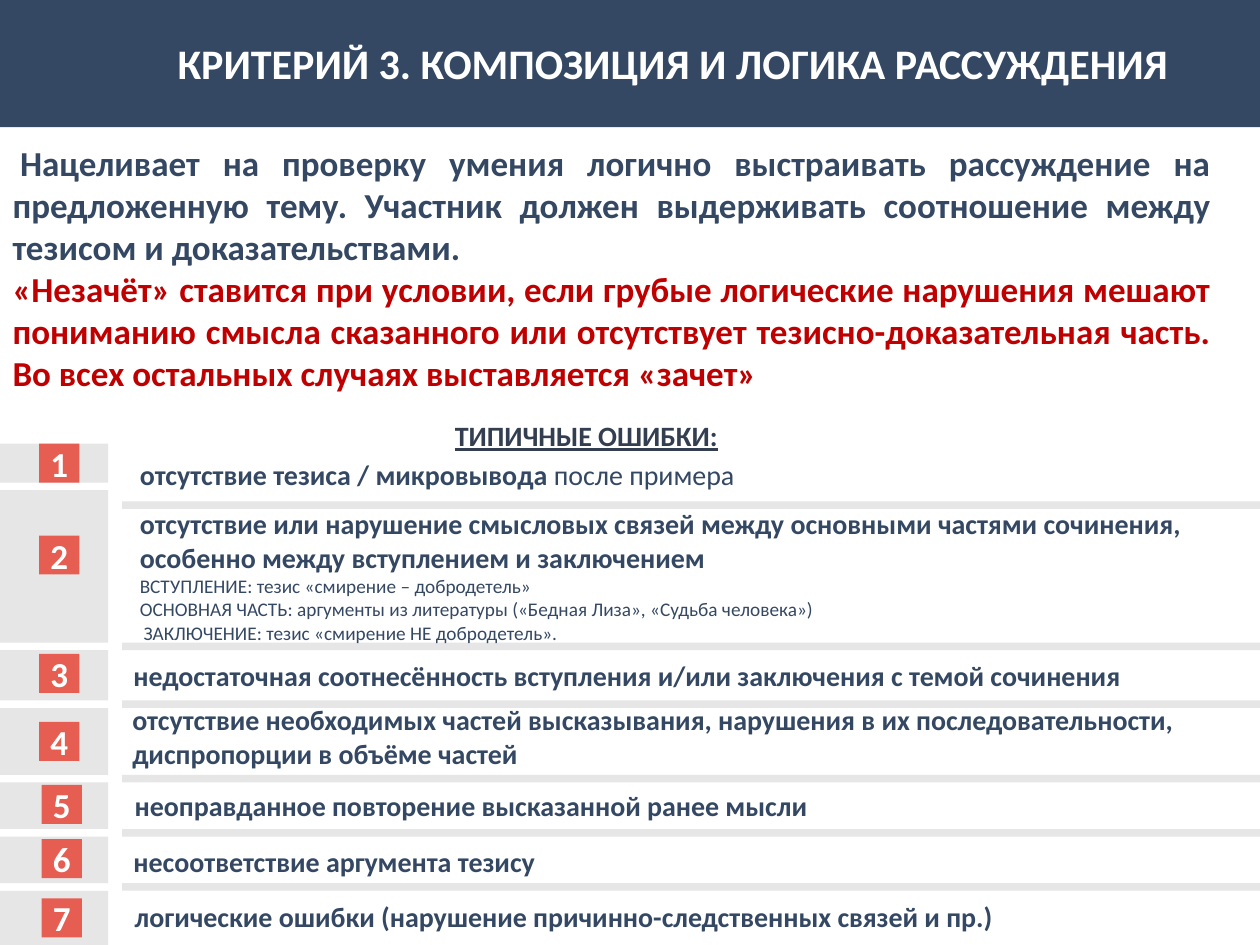
from pptx import Presentation
from pptx import util as u
from pptx.dml.color import RGBColor
from pptx.enum import shapes, text

NAVY, RED, CORAL, GREY, WHITE = "344863", "C00000", "E65E52", "E6E6E6", "FFFFFF"

prs = Presentation()
prs.slide_width, prs.slide_height = u.Inches(10), u.Inches(7.5)
slide = prs.slides.add_slide(prs.slide_layouts[6])


def add_block(left, top, width, height, color):
    block = slide.shapes.add_shape(shapes.MSO_SHAPE.RECTANGLE,
                                   *map(u.Inches, (left, top, width, height)))
    block.shadow.inherit = False
    block.fill.solid()
    block.fill.fore_color.rgb = RGBColor.from_string(color)
    block.line.fill.background()
    return block


def write(shape, paragraphs, inset=0.01, anchor=text.MSO_ANCHOR.TOP):
    """Each paragraph is (paragraph format, [(words, font format), ...])."""
    frame = shape.text_frame
    frame_format = dict(word_wrap=True, vertical_anchor=anchor, margin_left=0,
                        margin_right=0, margin_top=u.Inches(inset), margin_bottom=0)
    for key, value in frame_format.items():
        setattr(frame, key, value)
    for i, (layout, runs) in enumerate(paragraphs):
        paragraph = frame.paragraphs[0] if i == 0 else frame.add_paragraph()
        paragraph.alignment = layout.get("align", text.PP_ALIGN.LEFT)
        paragraph.space_before = u.Pt(layout.get("before", 0))
        for side in ("marL", "marR", "indent"):
            paragraph._p.get_or_add_pPr().set(side, str(u.Inches(layout.get(side, 0))))
        for words, look in runs:
            run = paragraph.add_run()
            run.text = words
            font_format = {"name": "Calibri", "size": 16, "bold": True, "color": NAVY, **look}
            run.font.color.rgb = RGBColor.from_string(font_format.pop("color"))
            font_format["size"] = u.Pt(font_format["size"])
            for key, value in font_format.items():
                setattr(run.font, key, value)


# Header band with the title
header = add_block(0, 0, 10, 1.01, NAVY)
write(header, [({"marL": 1.41}, [("КРИТЕРИЙ 3. КОМПОЗИЦИЯ И ЛОГИКА РАССУЖДЕНИЯ",
                                  {"size": 24, "color": WHITE})])], inset=0.3)

# Grey side bars, and separators in the gaps between them
GAP = 0.06
row_tops = [3.52, 3.89, 5.16, 5.62, 6.21, 6.64, 7.07]
row_ends = [top - GAP for top in row_tops[1:]] + [7.5]
for top, end in zip(row_tops, row_ends):
    add_block(0, top, 0.86, end - top, GREY)
for top in [3.98] + row_ends[1:-1]:
    add_block(0.97, top, 9.03, GAP, GREY)

# Numbered badges
badges = [(0.31, 3.52), (0.31, 4.25), (0.31, 5.19), (0.31, 5.73),
          (0.33, 6.23), (0.33, 6.66), (0.33, 7.13)]
for number, (left, top) in enumerate(badges, 1):
    badge = add_block(left, top, 0.32, 0.31, CORAL)
    write(badge, [({"align": text.PP_ALIGN.CENTER},
                   [(str(number), {"size": 20, "color": WHITE})])],
          inset=0, anchor=text.MSO_ANCHOR.MIDDLE)

# Text: what the criterion checks, then the typical mistakes
justified = {"align": text.PP_ALIGN.JUSTIFY, "marL": 0.01, "marR": 0.12}
small = {"size": 11, "bold": False}
passages = [
    ((0.09, 1.11, 9.64, 2.03), 0.01, [
        ({**justified, "indent": 0.06}, [(
            "Нацеливает на проверку умения логично выстраивать рассуждение на "
            "предложенную тему. Участник должен выдерживать соотношение между "
            "тезисом и доказательствами.", {"size": 20})]),
        (justified, [(
            "«Незачёт» ставится при условии, если грубые логические нарушения мешают "
            "пониманию смысла сказанного или отсутствует тезисно-доказательная часть. "
            "Во всех остальных случаях выставляется «зачет»",
            {"size": 20, "color": RED})])]),
    ((1.1, 3.26, 4.76, 0.65), 0.06, [
        ({"marL": 2.51}, [("ТИПИЧНЫЕ ОШИБКИ:", {"color": "333E50", "underline": True})]),
        ({"marL": 0.01, "before": 3.3}, [("отсутствие тезиса / микровывода ", {}),
                                         ("после примера", {"bold": False})])]),
    ((1.1, 4.01, 8.5, 1.12), 0.01, [
        ({"marL": 0.01}, [("отсутствие или нарушение смысловых связей между "
                           "основными частями сочинения,", {})]),
        ({"marL": 0.01}, [("особенно между вступлением и заключением", {})]),
        ({"marL": 0.01, "before": 0.5}, [("ВСТУПЛЕНИЕ: тезис «смирение – добродетель»", small)]),
        ({"marL": 0.01}, [("ОСНОВНАЯ ЧАСТЬ: аргументы из литературы "
                           "(«Бедная Лиза», «Судьба человека»)", small)]),
        ({"marL": 0.04}, [("ЗАКЛЮЧЕНИЕ: тезис «смирение НЕ добродетель».", small)])]),
]
single_mistakes = [
    (1.05, 5.22, 0.3, "недостаточная соотнесённость вступления и/или заключения с темой сочинения"),
    (1.04, 5.57, 0.56, "отсутствие необходимых частей высказывания, нарушения в их "
                       "последовательности, диспропорции в объёме частей"),
    (1.06, 6.25, 0.3, "неоправданное повторение высказанной ранее мысли"),
    (1.05, 6.69, 0.3, "несоответствие аргумента тезису"),
    (1.06, 7.13, 0.3, "логические ошибки (нарушение причинно-следственных связей и пр.)"),
]
for left, top, height, mistake in single_mistakes:
    passages.append(((left, top, 8.4, height), 0.01, [({"marL": 0.01}, [(mistake, {})])]))

for place, inset, paragraphs in passages:
    write(slide.shapes.add_textbox(*map(u.Inches, place)), paragraphs, inset)

prs.save("out.pptx")
